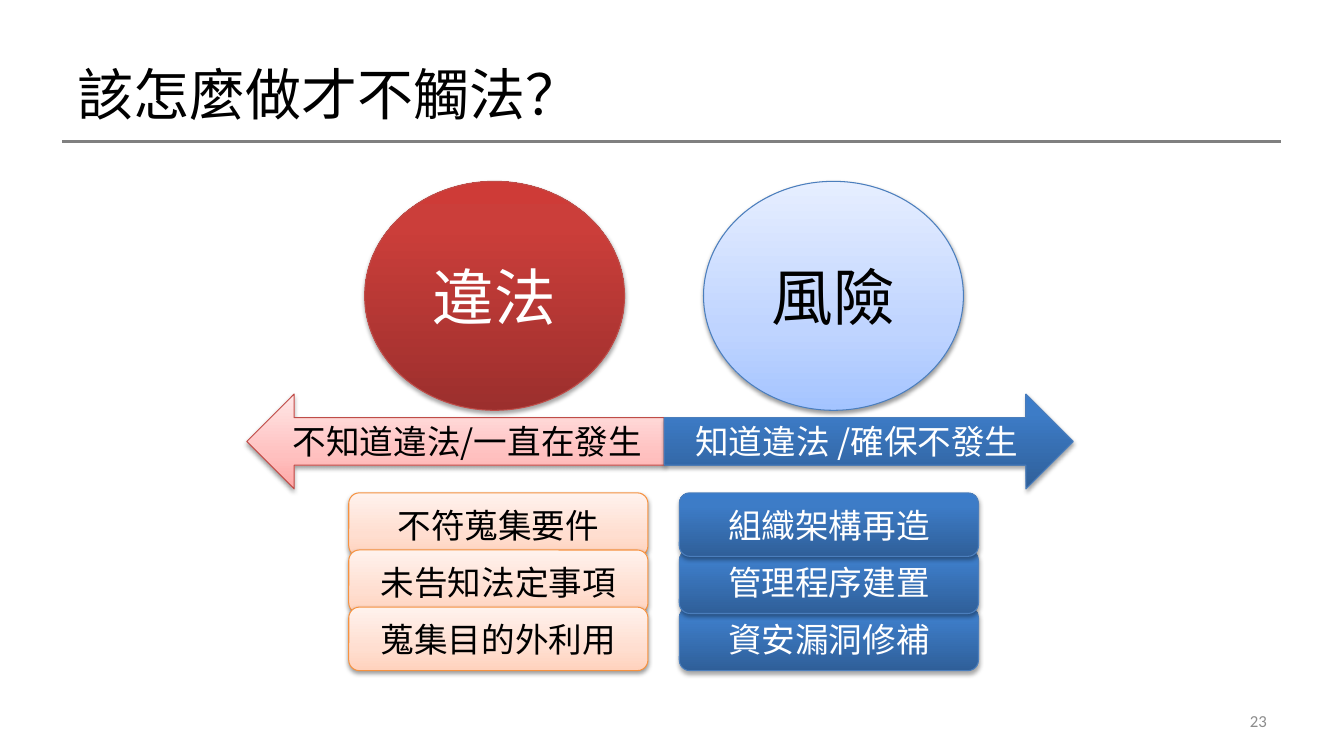
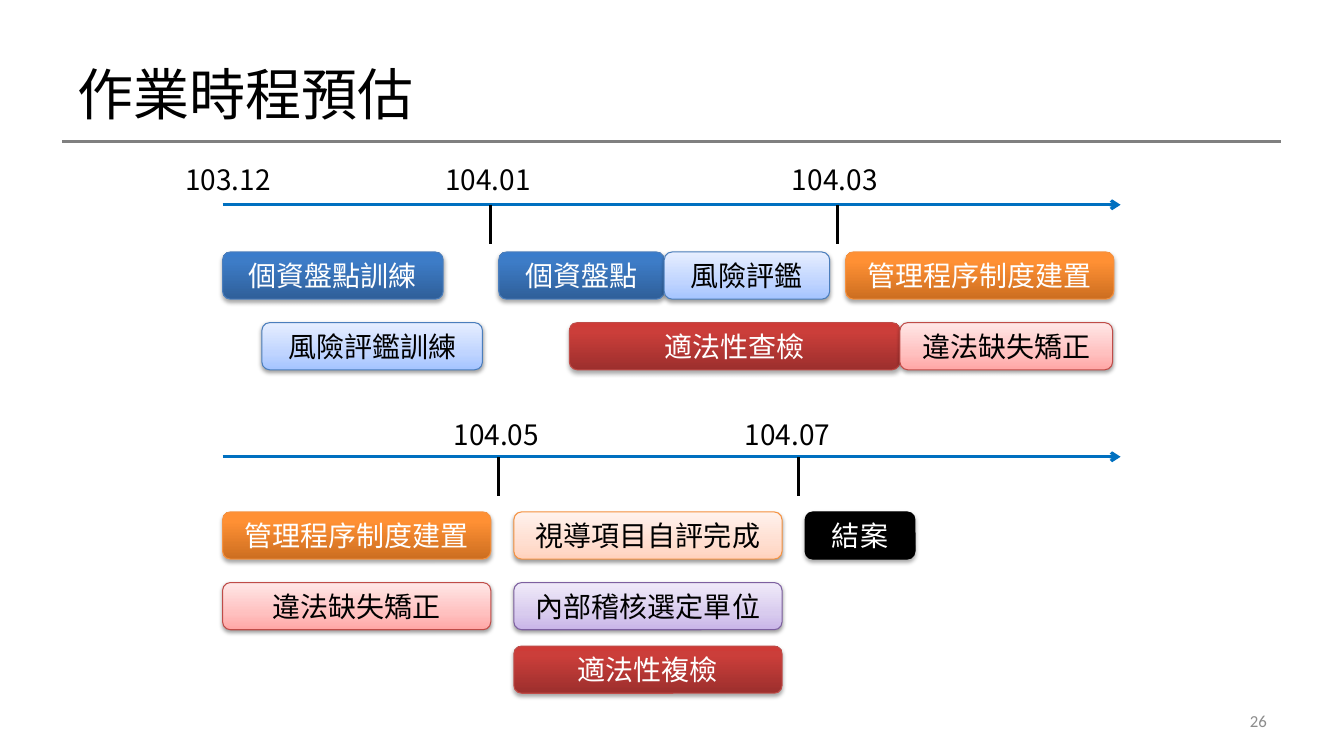
"""Build two slides on legal compliance: the risk overview and the work schedule."""
from lxml import etree
from pptx import Presentation
from pptx import util as u
from pptx.dml.color import RGBColor
from pptx.enum import shapes, text
from pptx.oxml.ns import qn

CJK, LATIN = "Noto Sans CJK SC", "Calibri"
COLORS = {"black": "000000", "white": "FFFFFF", "rule": "808080",
          "number": "8C8C8C", "axis": "0070C0"}
STRONG, SOFT = (0, 80, 100), (0, 35, 100)
STYLES = {
    "red": (STRONG, ("9C2F2D", "CB3E3A", "CE3B37"), "BF4C48"),
    "blue": (STRONG, ("2F5F99", "3D7CC7", "3A7CCB"), "4B7EBC"),
    "orange": (STRONG, ("CC6E20", "FF9034", "FF9136"), "F69240"),
    "black": (STRONG, ("000000",), "000000"),
    "pale red": (SOFT, ("FFA6A5", "FFC0BF", "FFE7E7"), "BF4C48"),
    "pale blue": (SOFT, ("A4C4FF", "BFD4FF", "E6EEFF"), "4B7EBC"),
    "pale orange": (SOFT, ("FFD2BD", "FFDED0", "FFF2ED"), "F69240"),
    "pale purple": (SOFT, ("C9B5E8", "D8CBEE", "F0EAF9"), "7D60A0"),
}
SHAPE = shapes.MSO_SHAPE
ALIGN = text.PP_ALIGN

CIRCLES = [("違法", "red", 9.19), ("風險", "pale blue", 17.73)]
ARROWS = [("不知道違法/一直在發生", "pale red", SHAPE.LEFT_ARROW, 6.22, 10.52),
          ("知道違法 /確保不發生", "blue", SHAPE.RIGHT_ARROW, 16.74, 10.31)]
VIOLATIONS = ["不符蒐集要件", "未告知法定事項", "蒐集目的外利用"]
MEASURES = ["組織架構再造", "管理程序建置", "資安漏洞修補"]

TIMELINES = [
    {"axis": 5.16, "label_top": 3.96,
     "dates": [("103.12", 4.42), ("104.01", 10.97), ("104.03", 19.71)],
     "ticks": [12.37, 21.11],
     "rows": [
         (6.35, [("個資盤點訓練", "blue", 5.61, 5.56),
                 ("個資盤點", "blue", 12.57, 4.17),
                 ("風險評鑑", "pale blue", 16.74, 4.17),
                 ("管理程序制度建置", "orange", 21.31, 6.76)]),
         (8.13, [("風險評鑑訓練", "pale blue", 6.6, 5.56),
                 ("適法性查檢", "red", 14.35, 8.33),
                 ("違法缺失矯正", "pale red", 22.68, 5.36)])]},
    {"axis": 11.51, "label_top": 10.39,
     "dates": [("104.05", 11.18), ("104.07", 18.52)],
     "ticks": [12.57, 20.12],
     "rows": [
         (12.9, [("管理程序制度建置", "orange", 5.61, 6.76),
                 ("視導項目自評完成", "pale orange", 12.95, 6.76),
                 ("結案", "black", 20.29, 2.77)]),
         (14.68, [("違法缺失矯正", "pale red", 5.61, 6.76),
                  ("內部稽核選定單位", "pale purple", 12.95, 6.76)]),
         (16.28, [("適法性複檢", "red", 12.95, 6.76)])]},
]


def rgb(value):
    return RGBColor.from_string(value)


def add_xml(parent, tag, **attributes):
    return etree.SubElement(parent, qn(tag), attributes)


def write(frame, words, size=20, color="black", font=CJK, align=ALIGN.LEFT,
          anchor=text.MSO_ANCHOR.MIDDLE):
    frame.word_wrap = True
    frame.auto_size = text.MSO_AUTO_SIZE.NONE
    frame.vertical_anchor = anchor
    paragraph = frame.paragraphs[0]
    paragraph.alignment = align
    run = paragraph.add_run()
    run.text = words
    run.font.size = u.Pt(size)
    run.font.color.rgb = rgb(COLORS[color])
    run.font.name = font
    add_xml(run._r.get_or_add_rPr(), "a:ea", typeface=font)


def add_label(slide, words, left, top, width, height, **style):
    label = slide.shapes.add_textbox(u.Cm(left), u.Cm(top), u.Cm(width), u.Cm(height))
    write(label.text_frame, words, **style)


def add_line(slide, start, end, color, arrow=False):
    line = slide.shapes.add_connector(shapes.MSO_CONNECTOR.STRAIGHT,
                                      *map(u.Cm, start + end))
    line.line.color.rgb = rgb(COLORS[color])
    line.line.width = u.Pt(2.25)
    properties = line.element.spPr
    if arrow:
        add_xml(properties.get_or_add_ln(), "a:tailEnd", type="arrow")
    add_xml(properties, "a:effectLst")


def add_block(slide, kind, words, style, left, top, width, height, size):
    positions, tones, outline = STYLES[style]
    strong = positions == STRONG
    block = slide.shapes.add_shape(kind, *map(u.Cm, (left, top, width, height)))
    block.line.color.rgb = rgb(outline)
    block.line.width = u.Pt(0.75)
    properties = block.element.spPr
    if len(tones) == 1:
        block.fill.solid()
        block.fill.fore_color.rgb = rgb(tones[0])
    else:
        block.fill.gradient()
        block.fill.gradient_angle = 90
        stops = properties.find(".//" + qn("a:gsLst"))
        for stop in list(stops):
            stops.remove(stop)
        for position, tone in zip(positions, tones):
            stop = add_xml(stops, "a:gs", pos=str(position * 1000))
            add_xml(stop, "a:srgbClr", val=tone)
    block.shadow.inherit = False
    shadow = add_xml(properties.find(qn("a:effectLst")), "a:outerShdw",
                     blurRad="40000", dist="23000" if strong else "20000",
                     dir="5400000", rotWithShape="0")
    shade = add_xml(shadow, "a:srgbClr", val=COLORS["black"])
    add_xml(shade, "a:alpha", val="35000" if strong else "38000")
    write(block.text_frame, words, size=size, align=ALIGN.CENTER,
          color="white" if strong else "black")


def add_slide(deck, heading, number):
    slide = deck.slides.add_slide(deck.slide_layouts[5])
    title = slide.shapes.title
    title.left, title.top, title.width, title.height = map(u.Cm, (1.7, 0.76, 30.48, 3.18))
    write(title.text_frame, heading, size=40)
    add_line(slide, (1.57, 3.57), (32.28, 3.57), "rule")
    add_label(slide, number, 24.28, 17.65, 7.9, 1.02, size=12, color="number",
              font=LATIN, align=ALIGN.RIGHT)
    return slide


def build_overview(deck):
    slide = add_slide(deck, "該怎麼做才不觸法？", "23")
    for words, style, left in CIRCLES:
        add_block(slide, SHAPE.OVAL, words, style, left, 4.57, 6.55, 5.77, 44)
    for words, style, kind, left, width in ARROWS:
        add_block(slide, kind, words, style, left, 9.93, width, 2.39, 24)
    violations = list(enumerate(VIOLATIONS))
    measures = list(enumerate(MEASURES))[::-1]
    for stack, style, left in ((violations, "pale orange", 8.79), (measures, "blue", 17.12)):
        for level, words in stack:
            add_block(slide, SHAPE.ROUNDED_RECTANGLE, words, style,
                      left, 12.42 + 1.44 * level, 7.54, 1.6, 24)


def build_schedule(deck):
    slide = add_slide(deck, "作業時程預估", "26")
    for timeline in TIMELINES:
        axis = timeline["axis"]
        add_line(slide, (5.61, axis), (28.24, axis), "axis", arrow=True)
        for date, left in timeline["dates"]:
            add_label(slide, date, left, timeline["label_top"], 3.17, 1.12,
                      anchor=text.MSO_ANCHOR.TOP)
        for tick in timeline["ticks"]:
            add_line(slide, (tick, axis), (tick, axis + 1), "black")
        for top, tasks in timeline["rows"]:
            for words, style, left, width in tasks:
                add_block(slide, SHAPE.ROUNDED_RECTANGLE, words, style,
                          left, top, width, 1.19, 20)


def main():
    deck = Presentation()
    deck.slide_width, deck.slide_height = u.Cm(33.87), u.Cm(19.05)
    build_overview(deck)
    build_schedule(deck)
    deck.save("out.pptx")


if __name__ == "__main__":
    main()
